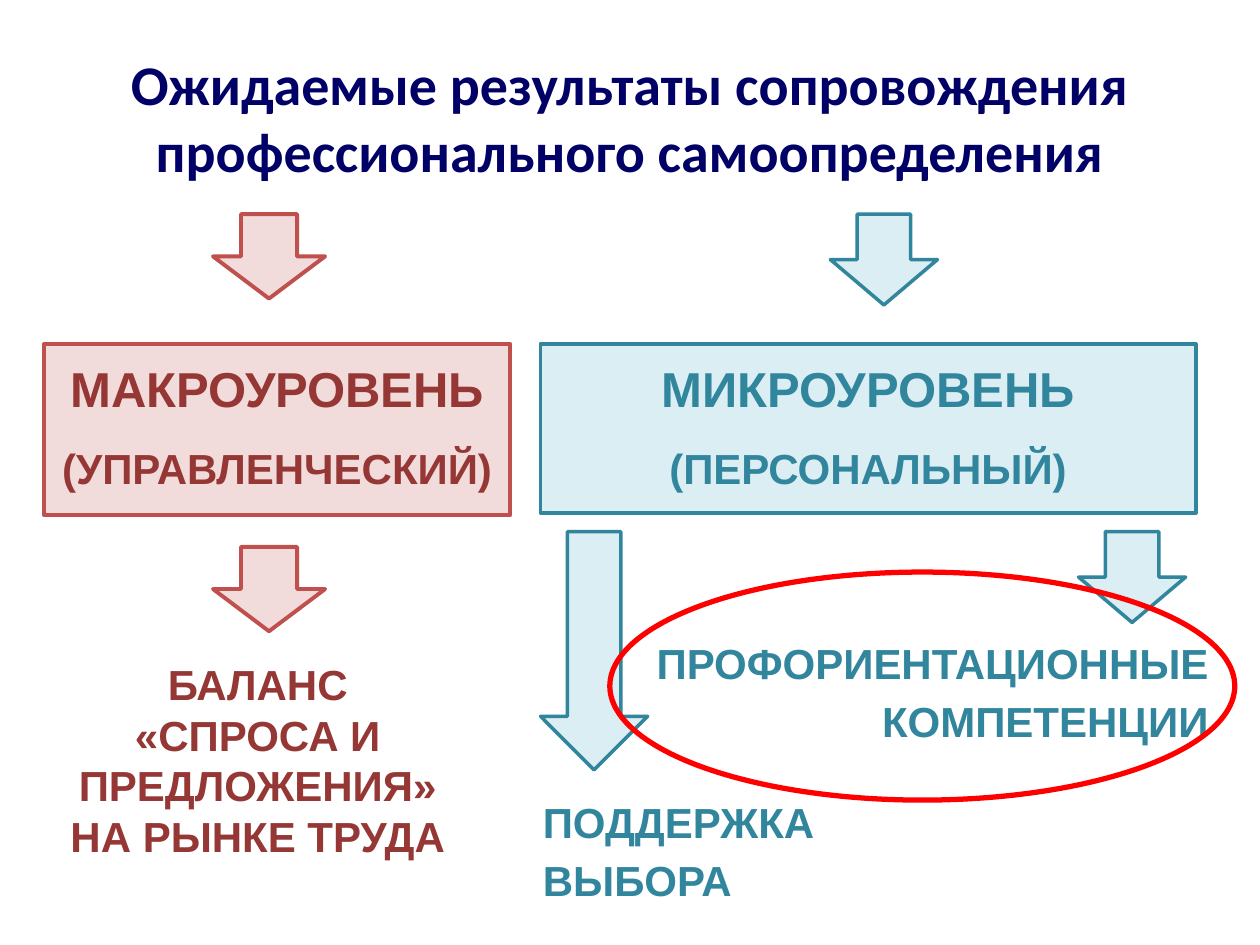
"""Builds the slide on expected results of career guidance support."""
import pptx
import pptx.dml.color
import pptx.enum.shapes
import pptx.enum.text
import pptx.util

Inches = pptx.util.Inches
Shapes = pptx.enum.shapes.MSO_SHAPE
Align = pptx.enum.text.PP_ALIGN
Anchor = pptx.enum.text.MSO_ANCHOR

MACRO = {"fill": "F2DCDB", "line": "C0504D", "text": "953735", "arrow_line": 2.25}
MICRO = {"fill": "DBEEF4", "line": "31859C", "text": "31859C", "arrow_line": 2}
TITLE_COLOR = "000066"
HIGHLIGHT_COLOR = "FF0000"


def color(hex_string):
    return pptx.dml.color.RGBColor.from_string(hex_string)


def write_text(shape, lines, text_color, align, font="Arial", spacing=None, anchor=Anchor.TOP):
    text_frame = shape.text_frame
    text_frame.word_wrap = True
    text_frame.vertical_anchor = anchor
    text_frame.text = "\n".join(text for text, size in lines)
    for paragraph, (text, size) in zip(text_frame.paragraphs, lines):
        paragraph.alignment = align
        if spacing:
            paragraph.line_spacing = spacing
            paragraph.space_after = pptx.util.Pt(10)
        for run in paragraph.runs:
            run.font.name = font
            run.font.size = pptx.util.Pt(size)
            run.font.bold = True
            run.font.color.rgb = color(text_color)


def add_outlined(slide, preset, box, line_color, line_width, fill_color=None):
    shape = slide.shapes.add_shape(preset, *map(Inches, box))
    shape.shadow.inherit = False
    if fill_color:
        shape.fill.solid()
        shape.fill.fore_color.rgb = color(fill_color)
    else:
        shape.fill.background()
    shape.line.color.rgb = color(line_color)
    shape.line.width = pptx.util.Pt(line_width)
    return shape


def add_level(slide, box, name, scope, theme):
    shape = add_outlined(slide, Shapes.RECTANGLE, box, theme["line"], 2.25, theme["fill"])
    write_text(shape, [(name, 28), (scope, 24)], theme["text"], Align.CENTER, spacing=1.15)


def add_arrow(slide, box, theme):
    add_outlined(slide, Shapes.DOWN_ARROW, box, theme["line"], theme["arrow_line"], theme["fill"])


def add_label(slide, box, lines, text_color, align, **options):
    text_box = slide.shapes.add_textbox(*map(Inches, box))
    write_text(text_box, lines, text_color, align, **options)


def main():
    presentation = pptx.Presentation()
    presentation.slide_width = Inches(10)
    presentation.slide_height = Inches(7.5)
    slide = presentation.slides.add_slide(presentation.slide_layouts[6])

    add_label(slide, (0.5, 0.3, 9, 1.25),
              [("Ожидаемые результаты сопровождения профессионального самоопределения", 32)],
              TITLE_COLOR, Align.CENTER, font="Calibri", anchor=Anchor.MIDDLE)

    add_level(slide, (0.35, 2.73, 3.7, 1.36), "МАКРОУРОВЕНЬ", "(УПРАВЛЕНЧЕСКИЙ)", MACRO)
    add_level(slide, (4.29, 2.73, 5.2, 1.34), "МИКРОУРОВЕНЬ", "(ПЕРСОНАЛЬНЫЙ)", MICRO)

    for top in (1.7, 4.34):
        add_arrow(slide, (1.69, top, 0.89, 0.67), MACRO)
    for left, top, height in ((6.59, 1.7, 0.72), (4.29, 4.22, 1.89), (8.56, 4.22, 0.72)):
        add_arrow(slide, (left, top, 0.85, height), MICRO)

    add_label(slide, (0.35, 5.18, 3.39, 0.93),
              [("БАЛАНС", 24), ("«СПРОСА И ПРЕДЛОЖЕНИЯ» НА РЫНКЕ ТРУДА", 24)],
              MACRO["text"], Align.CENTER)
    add_label(slide, (4.21, 6.21, 2.36, 0.93), [("ПОДДЕРЖКА ВЫБОРА", 24)],
              MICRO["text"], Align.LEFT, spacing=1.15)
    add_label(slide, (5, 4.95, 4.69, 0.93), [("ПРОФОРИЕНТАЦИОННЫЕ КОМПЕТЕНЦИИ", 24)],
              MICRO["text"], Align.RIGHT, spacing=1.15)

    add_outlined(slide, Shapes.OVAL, (4.84, 4.54, 4.96, 1.81), HIGHLIGHT_COLOR, 3)
    presentation.save("out.pptx")


if __name__ == "__main__":
    main()
